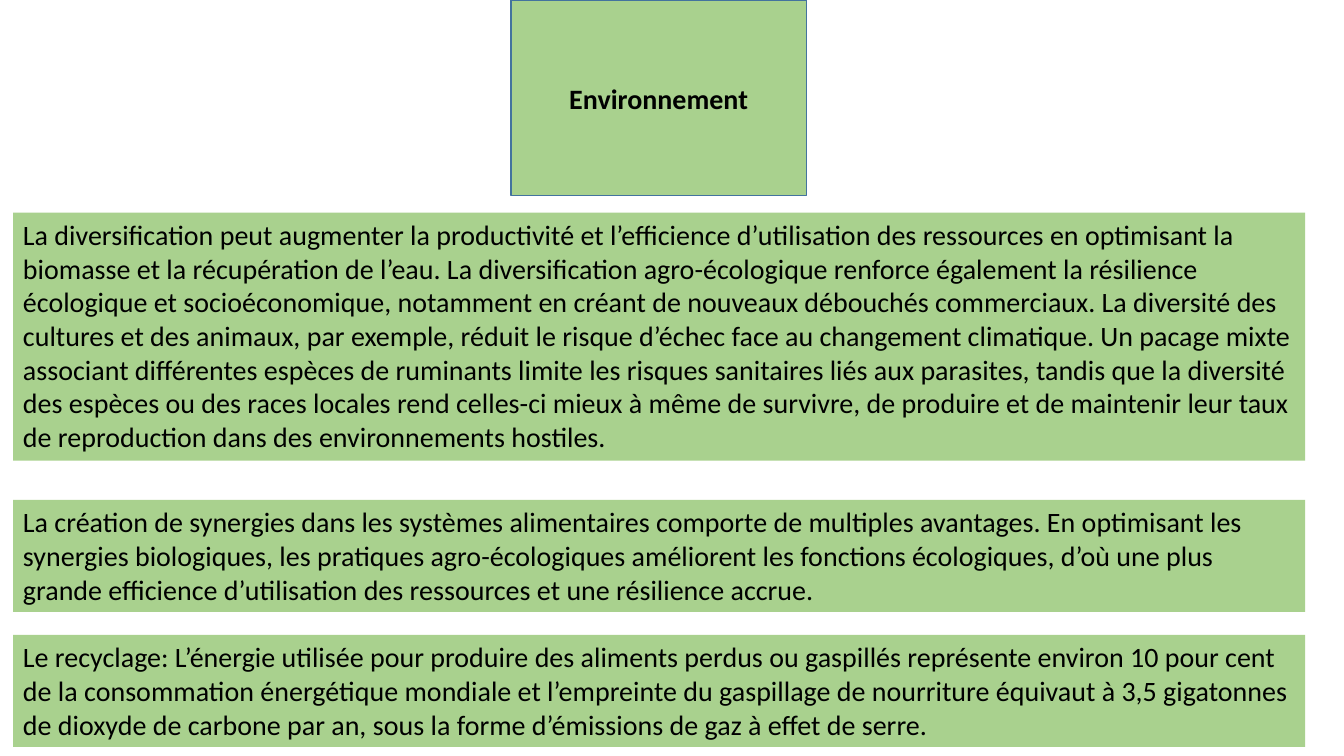
from dataclasses import dataclass

from lxml.etree import SubElement
from pptx import Presentation
from pptx.dml.color import RGBColor
from pptx.enum.text import MSO_ANCHOR, MSO_AUTO_SIZE, PP_ALIGN
from pptx.oxml.ns import qn
from pptx.shapes.base import BaseShape
from pptx.slide import Slide
from pptx.text.text import TextFrame
from pptx.util import Cm, Pt


@dataclass(frozen=True)
class Theme:
    font: str = "Calibri"
    size: Pt = Pt(20)
    text: RGBColor = RGBColor(0x00, 0x00, 0x00)
    fill: RGBColor = RGBColor(0xA9, 0xD1, 0x8E)
    outline: RGBColor = RGBColor(0x43, 0x73, 0x9E)
    outline_width: Pt = Pt(1)


@dataclass(frozen=True)
class Panel:
    top: float
    height: float
    text: str


THEME = Theme()
PANEL_LEFT, PANEL_WIDTH = Cm(0.33), Cm(32.56)

PANELS = (
    Panel(5.36, 6.25, (
        "La diversification peut augmenter la productivité et l’efficience d’utilisation des "
        "ressources en optimisant la biomasse et la récupération de l’eau. La diversification "
        "agro-écologique renforce également la résilience écologique et socioéconomique, "
        "notamment en créant de nouveaux débouchés commerciaux. La diversité des cultures et "
        "des animaux, par exemple, réduit le risque d’échec face au changement climatique. Un "
        "pacage mixte associant différentes espèces de ruminants limite les risques sanitaires "
        "liés aux parasites, tandis que la diversité des espèces ou des races locales rend "
        "celles-ci mieux à même de survivre, de produire et de maintenir leur taux de "
        "reproduction dans des environnements hostiles.")),
    Panel(12.6, 2.82, (
        "La création de synergies dans les systèmes alimentaires comporte de multiples "
        "avantages. En optimisant les synergies biologiques, les pratiques agro-écologiques "
        "améliorent les fonctions écologiques, d’où une plus grande efficience d’utilisation "
        "des ressources et une résilience accrue.")),
    Panel(16, 2.82, (
        "Le recyclage: L’énergie utilisée pour produire des aliments perdus ou gaspillés "
        "représente environ 10 pour cent de la consommation énergétique mondiale et "
        "l’empreinte du gaspillage de nourriture équivaut à 3,5 gigatonnes de dioxyde de "
        "carbone par an, sous la forme d’émissions de gaz à effet de serre.")),
)


def write_text(frame: TextFrame, text: str, align: PP_ALIGN, bold: bool = False) -> None:
    frame.word_wrap = True
    frame.text = text
    paragraph = frame.paragraphs[0]
    paragraph.alignment = align
    paragraph.font.name = THEME.font
    paragraph.font.size = THEME.size
    paragraph.font.bold = bold
    paragraph.font.color.rgb = THEME.text


def fill_shape(shape: BaseShape) -> None:
    shape.fill.solid()
    shape.fill.fore_color.rgb = THEME.fill


def add_title(slide: Slide, text: str) -> None:
    title = slide.shapes.title
    title.left, title.top, title.width, title.height = Cm(12.88), Cm(0), Cm(7.44), Cm(4.93)
    # The placeholder takes an elliptical outline
    geometry = SubElement(title.element.spPr, qn("a:prstGeom"), prst="ellipse")
    SubElement(geometry, qn("a:avLst"))
    fill_shape(title)
    title.line.color.rgb = THEME.outline
    title.line.width = THEME.outline_width
    title.text_frame.auto_size = MSO_AUTO_SIZE.NONE
    title.text_frame.vertical_anchor = MSO_ANCHOR.MIDDLE
    write_text(title.text_frame, text, PP_ALIGN.CENTER, bold=True)


def add_panel(slide: Slide, panel: Panel) -> None:
    box = slide.shapes.add_textbox(PANEL_LEFT, Cm(panel.top), PANEL_WIDTH, Cm(panel.height))
    fill_shape(box)
    box.text_frame.auto_size = MSO_AUTO_SIZE.SHAPE_TO_FIT_TEXT
    write_text(box.text_frame, panel.text, PP_ALIGN.LEFT)


def main() -> None:
    presentation = Presentation()
    presentation.slide_width, presentation.slide_height = Cm(33.87), Cm(19.05)
    # Title Only layout
    slide = presentation.slides.add_slide(presentation.slide_layouts[5])
    add_title(slide, "Environnement")
    for panel in PANELS:
        add_panel(slide, panel)
    presentation.save("out.pptx")


if __name__ == "__main__":
    main()
